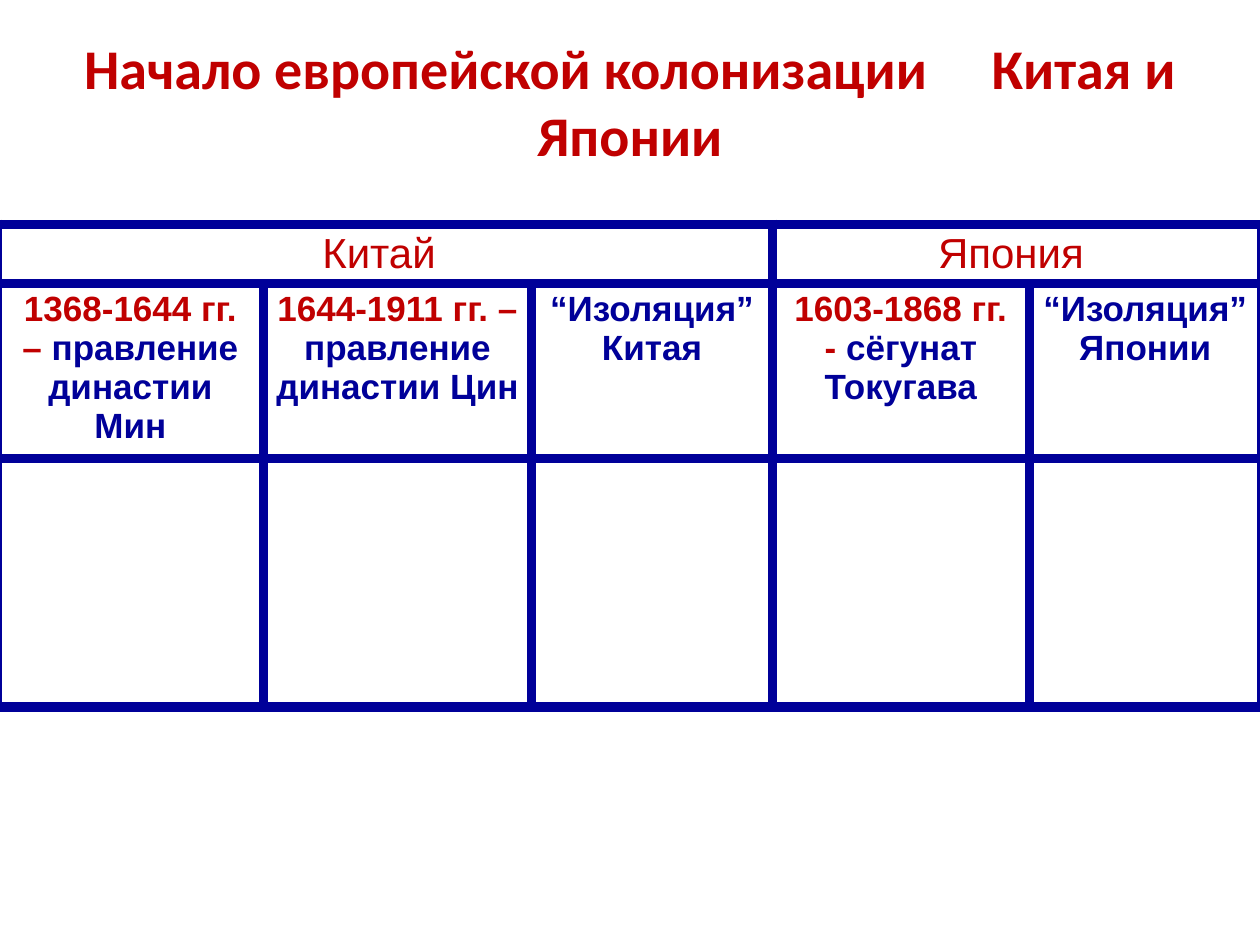
from dataclasses import dataclass

from lxml import etree
from pptx import Presentation
from pptx import util as u
from pptx.dml.color import RGBColor
from pptx.enum import text
from pptx.oxml.ns import qn

RED, BLUE = "C00000", "000099"

TITLE = [("Начало европейской колонизации", 0), (" ", 29), ("Китая и Японии", 0)]
COUNTRIES = [("Китай ", 0, 2), ("Япония ", 3, 4)]
PERIODS = [
    [("1368-1644 гг. – ", RED), ("правление династии Мин", BLUE)],
    [("1644-1911 гг. – ", RED), ("правление династии Цин", BLUE)],
    [("“Изоляция” Китая", BLUE)],
    [("1603-1868 гг. - ", RED), ("сёгунат Токугава", BLUE)],
    [("“Изоляция” Японии", BLUE)],
]
COLS = [2.11, 2.13, 1.91, 2.04, 1.84]
ROWS = [0.47, 1.39, 1.97]


@dataclass(frozen=True)
class Theme:
    title_font: str = "Calibri"
    table_font: str = "Arial"
    title_size: int = 32
    head_size: int = 24
    cell_size: int = 20
    border: str = BLUE
    border_width: int = 6


T = Theme()


def add_run(p, words, font, size, color, bold):
    p.alignment = text.PP_ALIGN.CENTER
    r = p.add_run()
    r.text = words
    r.font.name = font
    r.font.size = u.Pt(size)
    r.font.bold = bold
    r.font.color.rgb = RGBColor.from_string(color)
    return r


def style_cell(cell):
    tcPr = cell._tc.get_or_add_tcPr()
    for side in ("lnL", "lnR", "lnT", "lnB"):
        ln = etree.SubElement(tcPr, qn(f"a:{side}"), w=str(u.Pt(T.border_width)))
        fill = etree.SubElement(ln, qn("a:solidFill"))
        etree.SubElement(fill, qn("a:srgbClr"), val=T.border)
    cell.fill.background()


def add_title(s):
    sp = s.shapes.title
    sp.left, sp.top = u.Inches(0.27), u.Inches(0.21)
    sp.width, sp.height = u.Inches(9.46), u.Inches(1.18)
    tf = sp.text_frame
    tf.word_wrap = True
    tf.vertical_anchor = text.MSO_ANCHOR.MIDDLE
    for words, spacing in TITLE:
        r = add_run(tf.paragraphs[0], words, T.title_font, T.title_size, RED, True)
        if spacing:
            r.font._element.set("spc", str(spacing * 100))


def add_periods_table(s):
    frame = s.shapes.add_table(
        len(ROWS), len(COLS), u.Inches(-0.02), u.Inches(1.78),
        u.Inches(sum(COLS)), u.Inches(sum(ROWS)))
    table = frame.table
    table.first_row = table.horz_banding = False
    for col, width in zip(table.columns, COLS):
        col.width = u.Inches(width)
    for row, height in zip(table.rows, ROWS):
        row.height = u.Inches(height)
    for cell in table.iter_cells():
        style_cell(cell)
    for country, first, last in COUNTRIES:
        cell = table.cell(0, first)
        cell.merge(table.cell(0, last))
        add_run(cell.text_frame.paragraphs[0], country,
                T.table_font, T.head_size, RED, False)
    for i, runs in enumerate(PERIODS):
        p = table.cell(1, i).text_frame.paragraphs[0]
        for words, color in runs:
            add_run(p, words, T.table_font, T.cell_size, color, True)


def main():
    prs = Presentation()
    prs.slide_width, prs.slide_height = u.Inches(10), u.Inches(7.5)
    s = prs.slides.add_slide(prs.slide_layouts[5])
    add_title(s)
    add_periods_table(s)
    prs.save("out.pptx")


if __name__ == "__main__":
    main()
